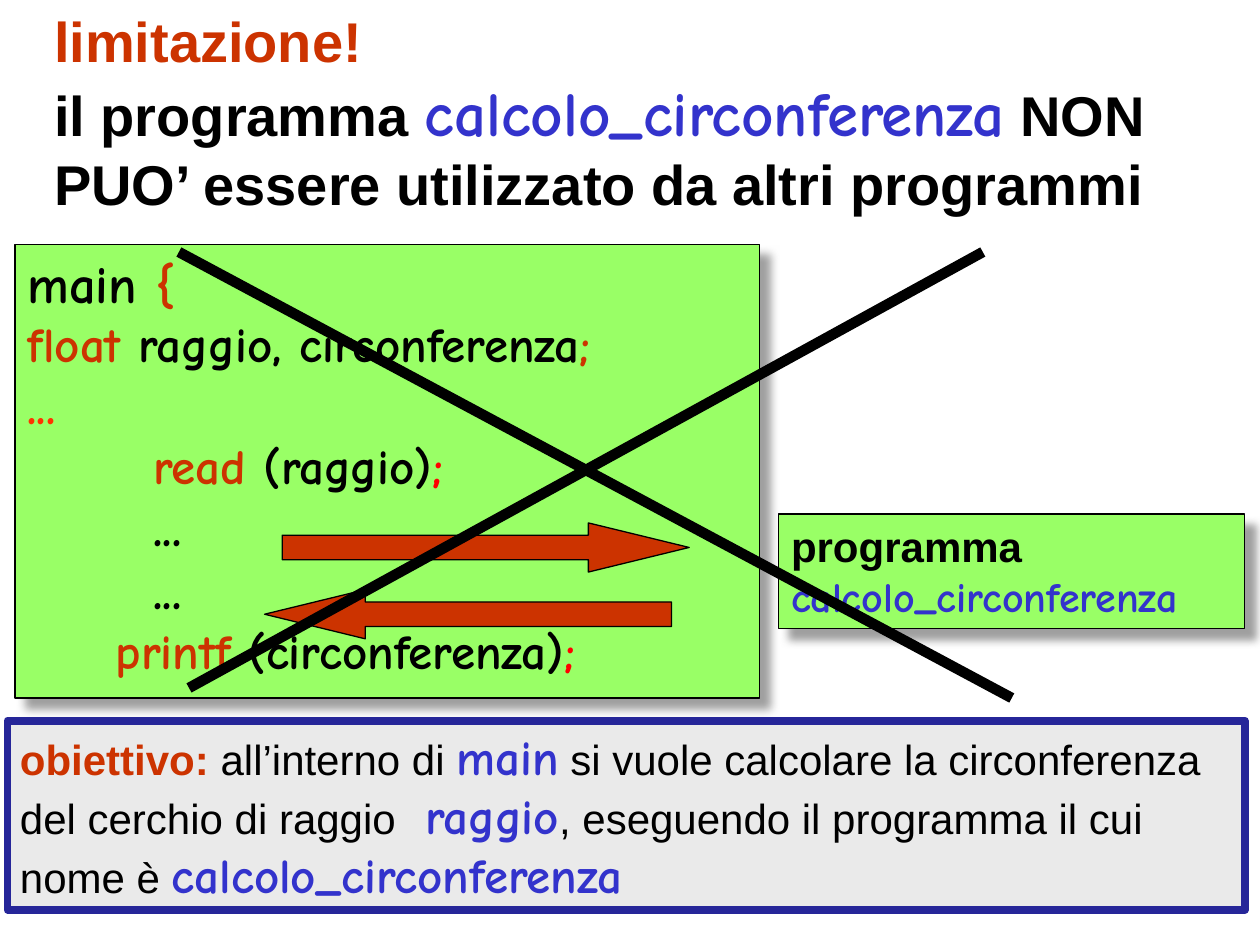
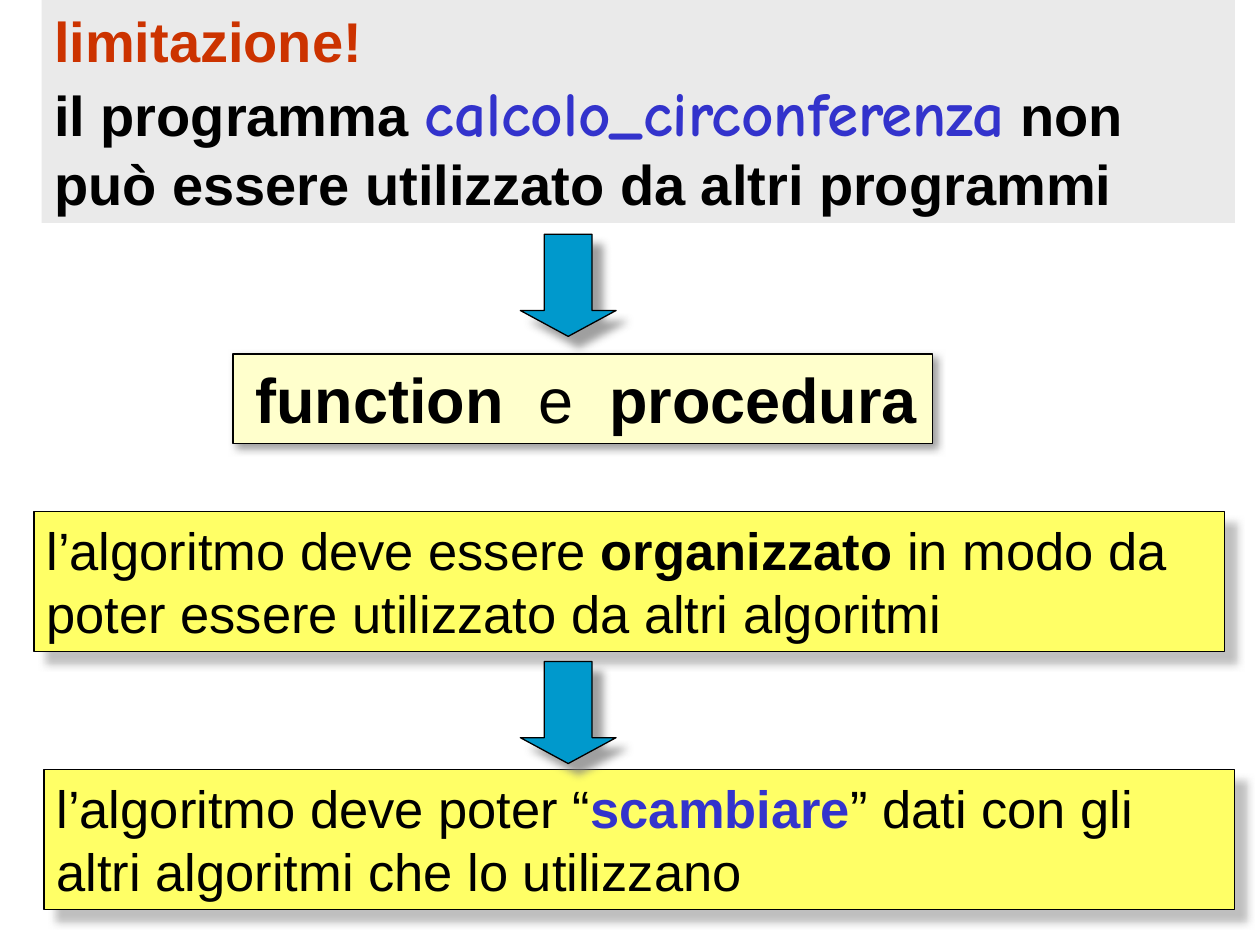
from pptx import Presentation
from pptx.dml.color import RGBColor
from pptx.enum.shapes import MSO_CONNECTOR as Connector, MSO_SHAPE as Shape
from pptx.enum.text import MSO_ANCHOR as Anchor, MSO_AUTO_SIZE as AutoSize, PP_ALIGN as Align
from pptx.oxml.ns import qn
from pptx.util import Inches, Pt
from lxml.etree import SubElement

BLACK, RED, BRIGHT_RED, ORANGE = "000000", "CC3300", "FF0000", "FF3300"
BLUE, NAVY, TEAL = "3333CC", "262699", "0099CC"
GREEN, YELLOW, CREAM, GREY, SHADOW = "99FF66", "FFFF66", "FFFFCC", "EAEAEA", "808080"
PROGRAM = "calcolo_circonferenza"


def rgb(code):
    return RGBColor.from_string(code)


def prose(text, size, color=BLACK, bold=False):
    return text, "Arial", size, color, bold


def code(text, size=28, color=BLACK, font="Comic Neue"):
    return text, font, size, color, True


class SlideBuilder:
    def __init__(self, deck):
        self.deck = deck
        self.page = None

    def new_page(self, claim, fill=None):
        self.page = self.deck.slides.add_slide(self.deck.slide_layouts[5])
        title = self.page.shapes.title
        title.left, title.top = Inches(0.33), Inches(0)
        title.width, title.height = Inches(9.47), Inches(1.77)
        if fill:
            title.fill.solid()
            title.fill.fore_color.rgb = rgb(fill)
        self.add_lines(title, [
            [prose("limitazione!", 32, RED, True)],
            [prose("il programma ", 32, bold=True), code(PROGRAM, 36, BLUE),
             prose(claim, 32, bold=True)],
        ])

    def add_lines(self, shape, lines, indents=None, wrap=True):
        frame = shape.text_frame
        frame.auto_size = AutoSize.NONE
        frame.word_wrap = wrap
        frame.vertical_anchor = Anchor.TOP
        for index, spans in enumerate(lines):
            para = frame.paragraphs[0] if index == 0 else frame.add_paragraph()
            para.alignment = Align.LEFT
            if indents and indents[index]:
                properties = para._p.get_or_add_pPr()
                properties.set("marL", str(Inches(indents[index])))
                properties.set("indent", "0")
            for text, font, size, color, bold in spans:
                span = para.add_run()
                span.text = text
                span.font.name = font
                span.font.size = Pt(size)
                span.font.bold = bold
                span.font.color.rgb = rgb(color)

    def shape(self, kind, place, fill, line=BLACK, weight=0.75):
        shape = self.page.shapes.add_shape(kind, *map(Inches, place))
        shape.shadow.inherit = False
        shape.fill.solid()
        shape.fill.fore_color.rgb = rgb(fill)
        shape.line.color.rgb = rgb(line)
        shape.line.width = Pt(weight)
        return shape

    def cast_shadow(self, shape, alpha=75, distance=8.5):
        effects = shape._element.spPr.find(qn("a:effectLst"))
        shadow = SubElement(effects, qn("a:outerShdw"), blurRad=str(Pt(5)),
                            dist=str(Pt(distance)), dir=str(45 * 60000),
                            algn="ctr", rotWithShape="0")
        color = SubElement(shadow, qn("a:srgbClr"), val=SHADOW)
        SubElement(color, qn("a:alpha"), val=str(alpha * 1000))

    def box(self, place, fill, lines, indents=None, wrap=True, alpha=75, distance=8.5):
        box = self.shape(Shape.RECTANGLE, place, fill)
        self.cast_shadow(box, alpha, distance)
        self.add_lines(box, lines, indents, wrap)

    def framed_box(self, place, lines):
        box = self.shape(Shape.RECTANGLE, place, GREY, NAVY, 4.5)
        self.add_lines(box, lines)

    def arrow(self, kind, place, fill, head, shadow=False):
        arrow = self.shape(kind, place, fill)
        arrow.adjustments[0] = 0.5
        arrow.adjustments[1] = head
        if shadow:
            self.cast_shadow(arrow)

    def stroke(self, start, end):
        stroke = self.page.shapes.add_connector(
            Connector.STRAIGHT, *map(Inches, (*start, *end)))
        stroke.line.color.rgb = rgb(BLACK)
        stroke.line.width = Pt(6)
        SubElement(stroke._element.spPr, qn("a:effectLst"))


def limitation_page(builder):
    builder.new_page(" NON PUO’ essere utilizzato da altri programmi")
    builder.box((0.12, 1.94, 5.91, 3.6), GREEN, [
        [code("main", 30), code(" {", 30, RED)],
        [code("float ", color=RED), code("raggio, circonferenza"), code(";", color=RED)],
        [code("...", 30, ORANGE)],
        [code("read", color=RED), code(" (raggio)"), code(";", color=BRIGHT_RED)],
        [code("...", 30)],
        [code("...", 30)],
        [code("printf", color=RED), code(" (circonferenza)"), code(";", color=BRIGHT_RED)],
    ], indents=(0, 0, 0, 1, 1, 1, 0.7))
    builder.box((6.18, 4.08, 3.7, 0.91), GREEN, [
        [prose("programma", 24, bold=True)],
        [code(PROGRAM, 24, BLUE)],
    ])
    builder.arrow(Shape.RIGHT_ARROW, (2.24, 4.15, 3.23, 0.39), RED, 2.05)
    builder.arrow(Shape.LEFT_ARROW, (2.1, 4.68, 3.23, 0.39), RED, 2.05)
    builder.framed_box((0.06, 5.72, 9.82, 1.5), [[
        prose("obiettivo:", 24, RED, True),
        prose(" all’interno di ", 24),
        code("main", color=BLUE),
        prose(" si vuole calcolare la circonferenza del cerchio di raggio", 24),
        code(" ", color=BLUE, font="Courier New"),
        code("raggio", color=BLUE),
        prose(", eseguendo il programma il cui nome è ", 24),
        code(PROGRAM, color=BLUE),
    ]])
    builder.stroke((1.5, 5.46), (7.8, 2))
    builder.stroke((1.42, 2), (8.03, 5.54))


def solution_page(builder):
    builder.new_page(" non può essere utilizzato da altri programmi", GREY)
    builder.box((1.85, 2.81, 5.55, 0.71), CREAM, [[
        prose("function", 36, bold=True),
        prose("  e  ", 36),
        prose("procedura", 36, bold=True),
    ]], indents=(0.08,), wrap=False, distance=3)
    builder.box((0.27, 4.06, 9.45, 1.11), YELLOW, [[
        prose("l’algoritmo deve essere ", 30),
        prose("organizzato", 30, bold=True),
        prose(" in modo da poter essere utilizzato da altri algoritmi", 30),
    ]], alpha=50)
    builder.box((0.35, 6.11, 9.45, 1.11), YELLOW, [[
        prose("l’algoritmo deve poter “", 30),
        prose("scambiare", 30, BLUE, True),
        prose("” dati con gli altri algoritmi che lo utilizzano", 30),
    ]], alpha=50)
    for top in (1.86, 5.25):
        builder.arrow(Shape.DOWN_ARROW, (4.13, top, 0.76, 0.81), TEAL, 0.27, shadow=True)


def main():
    deck = Presentation()
    deck.slide_width, deck.slide_height = Inches(10), Inches(7.5)
    builder = SlideBuilder(deck)
    limitation_page(builder)
    solution_page(builder)
    deck.save("out.pptx")


if __name__ == "__main__":
    main()
